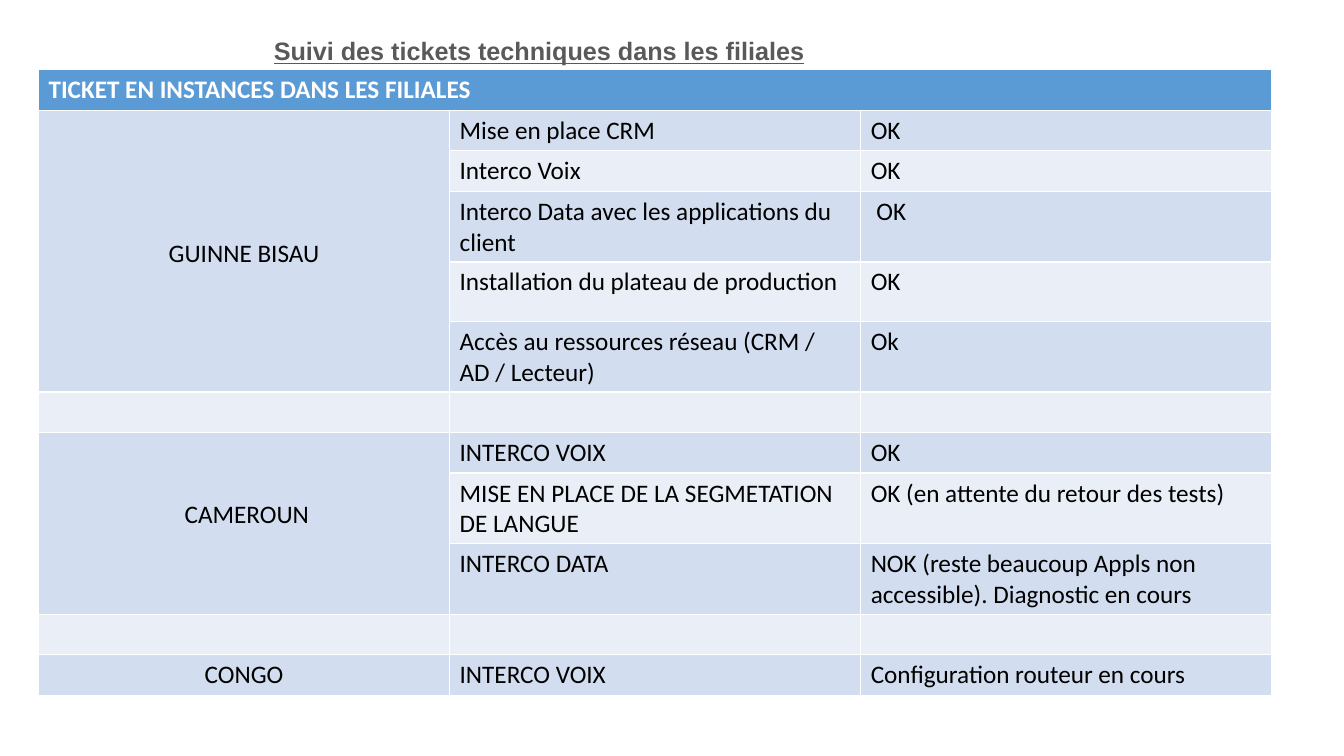
from pptx import Presentation
from pptx.dml.color import RGBColor
from pptx.enum.text import MSO_ANCHOR as Anchor, PP_ALIGN as Align
from pptx.util import Cm, Pt

COLORS = {
    "title": "595959",
    "header": "5B9BD5",
    "header_text": "FFFFFF",
    "text": "000000",
    "dark_band": "D2DEEF",
    "light_band": "EAEFF7",
}
HEADING = "TICKET EN INSTANCES DANS LES FILIALES"
TICKETS = [
    ("GUINNE BISAU", "Mise en place CRM", "OK"),
    ("", "Interco Voix", "OK"),
    ("", "Interco Data avec les applications du client", " OK"),
    ("", "Installation du plateau de production", "OK"),
    ("", "Accès au ressources réseau (CRM / AD / Lecteur)", "Ok"),
    ("", "", ""),
    (" CAMEROUN", "INTERCO VOIX", "OK"),
    ("", "MISE EN PLACE DE LA SEGMETATION DE LANGUE", "OK (en attente du retour des tests)"),
    ("", "INTERCO DATA", "NOK (reste beaucoup Appls non accessible). Diagnostic en cours"),
    ("", "", ""),
    ("CONGO", "INTERCO VOIX", "Configuration routeur en cours"),
]
ONE_LINE, TWO_LINES = 1.02, 1.78
TALL_ROWS = {3: TWO_LINES, 4: 1.5, 5: TWO_LINES, 8: TWO_LINES, 9: TWO_LINES}
COUNTRY_SPANS = [(1, 5), (7, 9)]


def style_text(paragraph, color, font_name, bold=False):
    """Give a paragraph its 18-point font."""
    font = paragraph.font
    font.name, font.size, font.bold = font_name, Pt(18), bold
    font.color.rgb = RGBColor.from_string(COLORS[color])


def fill_cell(cell, text, band, color="text", bold=False):
    """Write one cell on its band colour."""
    cell.fill.solid()
    cell.fill.fore_color.rgb = RGBColor.from_string(COLORS[band])
    cell.text = text
    style_text(cell.text_frame.paragraphs[0], color, "Calibri", bold)


def add_title(slide, left, top, width, height):
    """Place the underlined slide title."""
    frame = slide.shapes.add_textbox(Cm(left), Cm(top), Cm(width), Cm(height)).text_frame
    frame.word_wrap = False
    frame.vertical_anchor = Anchor.MIDDLE
    title = frame.paragraphs[0]
    title.text = "Suivi des tickets techniques dans les filiales"
    title.alignment = Align.JUSTIFY
    style_text(title, "title", "Arial", bold=True)
    title.font.underline = True


def add_tickets(slide, left, top, width):
    """Place the ticket table, grouped by country."""
    heights = [TALL_ROWS.get(row, ONE_LINE) for row in range(len(TICKETS) + 1)]
    table = slide.shapes.add_table(
        len(heights), 3, Cm(left), Cm(top), Cm(width), Cm(sum(heights))
    ).table
    for column in table.columns:
        column.width = Cm(width / 3)
    for row, height in zip(table.rows, heights):
        row.height = Cm(height)

    for column in range(3):
        heading = "" if column else HEADING
        fill_cell(table.cell(0, column), heading, "header", "header_text", bold=True)
    table.cell(0, 0).merge(table.cell(0, 2))

    for row, ticket in enumerate(TICKETS, start=1):
        band = "dark_band" if row % 2 else "light_band"
        for column, text in enumerate(ticket):
            fill_cell(table.cell(row, column), text, band)
        table.cell(row, 0).text_frame.paragraphs[0].alignment = Align.CENTER

    for first, last in COUNTRY_SPANS:
        country = table.cell(first, 0)
        country.merge(table.cell(last, 0))
        country.vertical_anchor = Anchor.MIDDLE
    table.cell(1, 0).margin_top = Cm(0.28)
    table.cell(7, 0).margin_bottom = Cm(0.58)


def main():
    """Build and save the ticket follow-up slide."""
    deck = Presentation()
    deck.slide_width, deck.slide_height = Cm(33.87), Cm(19.05)
    slide = deck.slides.add_slide(deck.slide_layouts[6])
    add_title(slide, 6.65, 0.76, 14.02, 1.02)
    add_tickets(slide, 0.97, 1.76, 31.08)
    deck.save("out.pptx")


if __name__ == "__main__":
    main()
